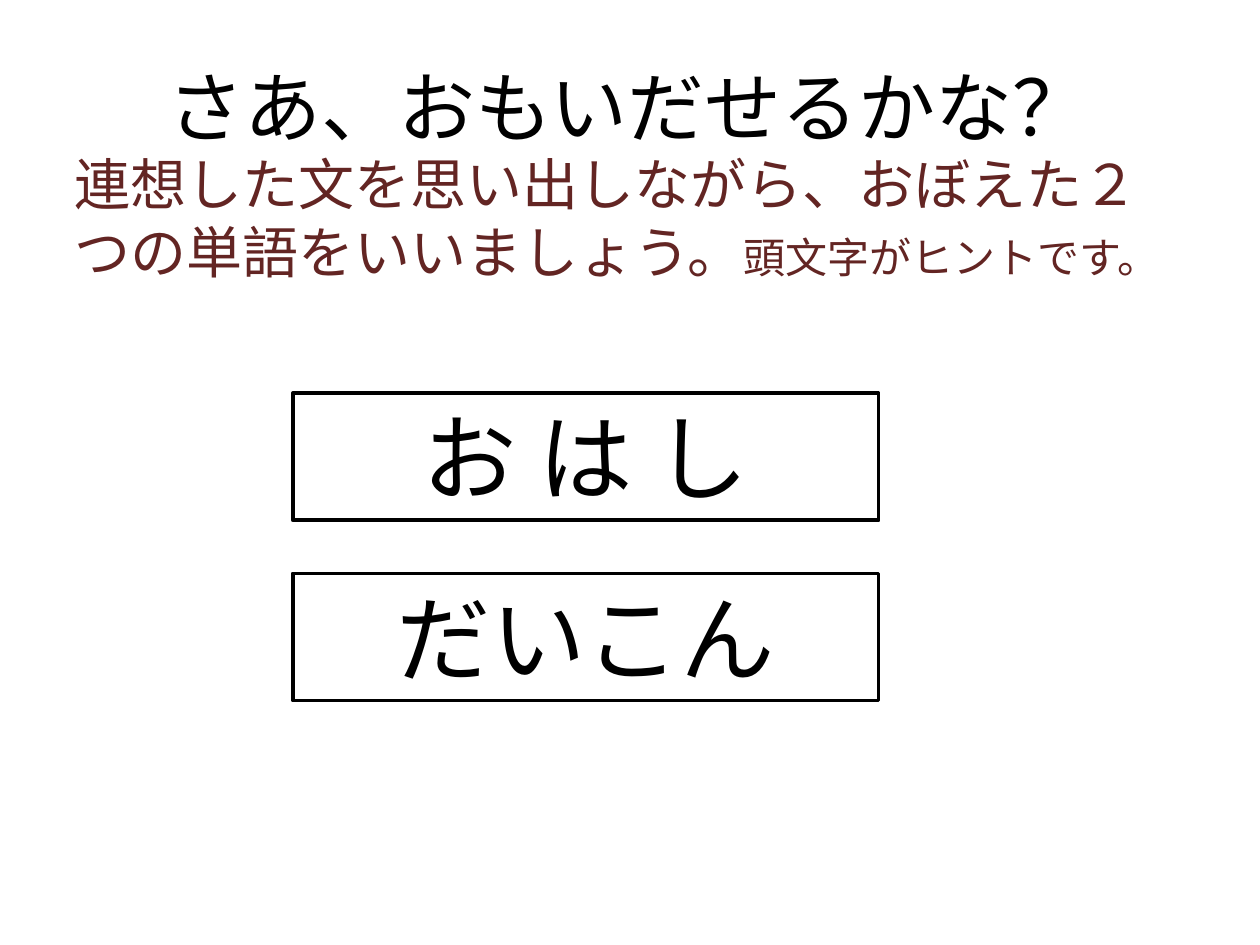
from dataclasses import dataclass

from pptx import Presentation
from pptx import util as u
from pptx.dml.color import RGBColor
from pptx.enum import shapes, text


@dataclass(frozen=True)
class Theme:
    font: str = "Calibri"
    ink: str = "000000"
    accent: str = "632523"
    paper: str = "FFFFFF"
    title_size: int = 44
    word_size: int = 54
    guide_size: int = 32
    hint_size: int = 24


THEME = Theme()


def style_run(run, size, color):
    run.font.name = THEME.font
    run.font.size = u.Pt(size)
    run.font.color.rgb = RGBColor.from_string(color)


def add_text(slide, box, parts, color, align, anchor):
    """Add one wrapped paragraph from (wording, size) parts."""
    frame = slide.shapes.add_textbox(*map(u.Pt, box)).text_frame
    frame.word_wrap = True
    frame.vertical_anchor = anchor
    paragraph = frame.paragraphs[0]
    paragraph.alignment = align
    for wording, size in parts:
        run = paragraph.add_run()
        run.text = wording
        style_run(run, size, color)


def add_word_card(slide, box, word):
    card = slide.shapes.add_shape(shapes.MSO_SHAPE.RECTANGLE, *map(u.Pt, box))
    card.shadow.inherit = False
    card.fill.solid()
    card.fill.fore_color.rgb = RGBColor.from_string(THEME.paper)
    card.line.color.rgb = RGBColor.from_string(THEME.ink)
    card.line.width = u.Pt(2)
    frame = card.text_frame
    frame.vertical_anchor = text.MSO_ANCHOR.TOP
    frame.text = word
    paragraph = frame.paragraphs[0]
    paragraph.alignment = text.PP_ALIGN.CENTER
    style_run(paragraph.runs[0], THEME.word_size, THEME.ink)


def main():
    deck = Presentation()
    deck.slide_width, deck.slide_height = u.Pt(720), u.Pt(540)
    slide = deck.slides.add_slide(deck.slide_layouts[6])

    first_top, pitch = 224.6, 103
    for row, word in enumerate(("お は し", "だいこん")):
        add_word_card(slide, (167.3, first_top + row * pitch, 334.8, 72.7), word)

    add_text(slide, (35.3, 15.1, 648, 90),
             [("さあ、おもいだせるかな？", THEME.title_size)],
             THEME.ink, text.PP_ALIGN.CENTER, text.MSO_ANCHOR.MIDDLE)
    add_text(slide, (35.3, 82.1, 647.3, 85),
             [("連想した文を思い出しながら、おぼえた２つの単語をいいましょう。", THEME.guide_size),
              ("頭文字がヒントです。", THEME.hint_size)],
             THEME.accent, text.PP_ALIGN.LEFT, text.MSO_ANCHOR.TOP)

    deck.save("out.pptx")


if __name__ == "__main__":
    main()
